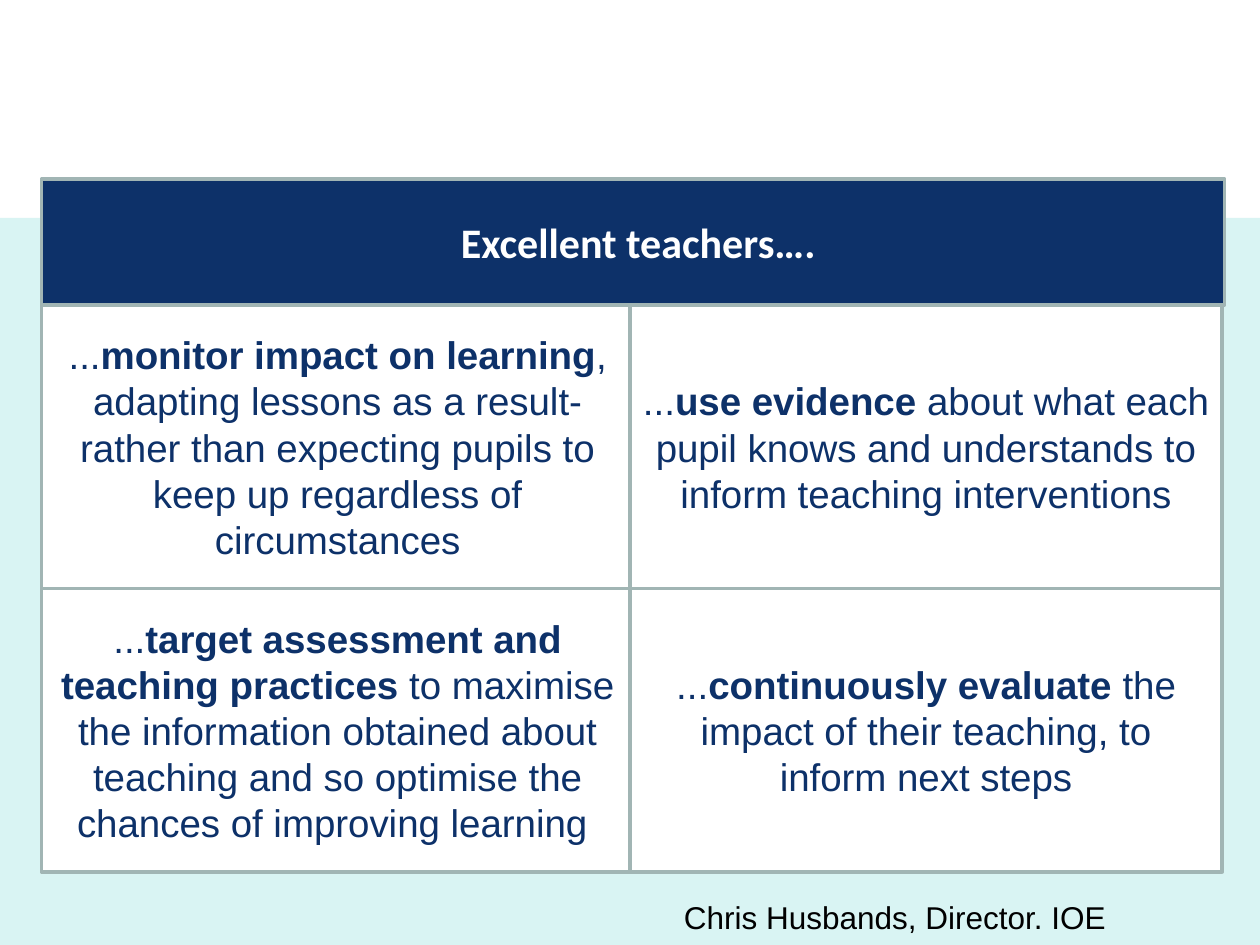
from pptx import Presentation
from pptx.dml.color import RGBColor
from pptx.enum.shapes import MSO_SHAPE
from pptx.enum.text import MSO_ANCHOR, PP_ALIGN
from pptx.util import Inches, Pt

RECTANGLE = MSO_SHAPE.RECTANGLE
MIDDLE, TOP = MSO_ANCHOR.MIDDLE, MSO_ANCHOR.TOP
CENTER, LEFT = PP_ALIGN.CENTER, PP_ALIGN.LEFT

# Content: each practice is (bold phrase, remaining text), row by row
HEADING = "Excellent teachers…."
PRACTICES = [
    [
        ("monitor impact on learning",
         ", adapting lessons as a result- rather than expecting pupils to "
         "keep up regardless of circumstances"),
        ("use evidence",
         " about what each pupil knows and understands to inform teaching "
         "interventions"),
    ],
    [
        ("target assessment and teaching practices",
         " to maximise the information obtained about teaching and so "
         "optimise the chances of improving learning "),
        ("continuously evaluate ",
         "the impact of their teaching, to inform next steps"),
    ],
]
ATTRIBUTION = "Chris Husbands, Director. IOE"

THEME = {
    "navy": RGBColor(0x0D, 0x31, 0x69),
    "white": RGBColor(0xFF, 0xFF, 0xFF),
    "black": RGBColor(0, 0, 0),
    "band": RGBColor(0xD9, 0xF4, 0xF3),
    "border": RGBColor(0xA1, 0xB5, 0xB4),
    "border_width": Pt(2),
    "heading": {"name": "Calibri", "size": Pt(24), "bold": True},
    "body": {"name": "Arial", "size": Pt(22), "bold": False},
    "strong": {"name": "Arial", "size": Pt(22), "bold": True},
    "credit": {"name": "Arial", "size": Pt(18), "bold": False},
}

# Layout in inches
COLUMN_LEFTS = [0.33, 5]
GRID_TOP, CELL_WIDTH, CELL_HEIGHT = 2.42, 4.7, 2.25
HEADING_HEIGHT, HEADING_WIDTH = 1, 9.39
HEADING_INSET = 0.18


def add_panel(slide, box, fill, bordered=True):
    panel = slide.shapes.add_shape(RECTANGLE, *map(Inches, box))
    panel.shadow.inherit = False
    panel.fill.solid()
    panel.fill.fore_color.rgb = fill
    if bordered:
        panel.line.color.rgb = THEME["border"]
        panel.line.width = THEME["border_width"]
    else:
        panel.line.fill.background()
    return panel


def write(shape, runs, color, align=CENTER, anchor=MIDDLE):
    frame = shape.text_frame
    frame.word_wrap = True
    frame.vertical_anchor = anchor
    paragraph = frame.paragraphs[0]
    paragraph.alignment = align
    for text, style in runs:
        run = paragraph.add_run()
        run.text = text
        run.font.color.rgb = color
        for attribute, value in THEME[style].items():
            setattr(run.font, attribute, value)


def main():
    prs = Presentation()
    prs.slide_width, prs.slide_height = Inches(10), Inches(7.5)
    slide = prs.slides.add_slide(prs.slide_layouts[6])

    # Tinted lower background
    add_panel(slide, (0, 1.73, 10, 5.77), THEME["band"], bordered=False)

    # Grid of practices
    for row, practices in enumerate(PRACTICES):
        top = GRID_TOP + row * CELL_HEIGHT
        for left, (phrase, rest) in zip(COLUMN_LEFTS, practices):
            cell = add_panel(slide, (left, top, CELL_WIDTH, CELL_HEIGHT), THEME["white"])
            runs = [("...", "body"), (phrase, "strong"), (rest, "body")]
            write(cell, runs, THEME["navy"])

    # Heading bar
    heading_box = (COLUMN_LEFTS[0], GRID_TOP - HEADING_HEIGHT, HEADING_WIDTH, HEADING_HEIGHT)
    heading = add_panel(slide, heading_box, THEME["navy"])
    heading.text_frame.margin_left = Inches(HEADING_INSET)
    write(heading, [(HEADING, "heading")], THEME["white"])

    # Attribution
    credit = slide.shapes.add_textbox(*map(Inches, (5.33, 7.08, 3.83, 0.4)))
    write(credit, [(ATTRIBUTION, "credit")], THEME["black"], LEFT, TOP)

    prs.save("out.pptx")


if __name__ == "__main__":
    main()
